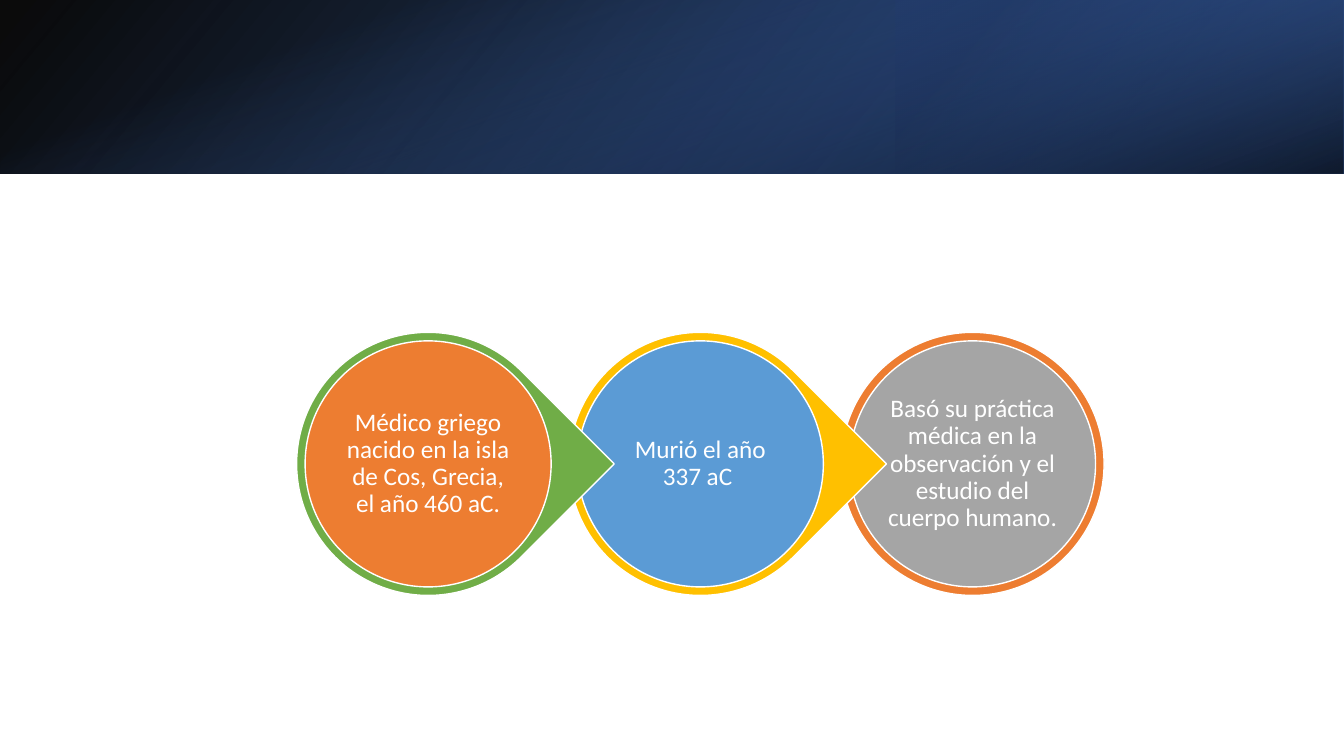
from lxml.etree import SubElement
from pptx import Presentation
from pptx.dml.color import RGBColor
from pptx.enum.shapes import MSO_SHAPE
from pptx.enum.text import MSO_ANCHOR, PP_ALIGN
from pptx.oxml.ns import qn
from pptx.util import Cm, Pt

WHITE = RGBColor(0xFF, 0xFF, 0xFF)
BLACK = RGBColor(0x00, 0x00, 0x00)
NAVY = RGBColor(0x20, 0x38, 0x64)
DARK_BLUE = RGBColor(0x2F, 0x55, 0x97)
MID_BLUE = RGBColor(0x44, 0x72, 0xC4)
SKY_BLUE = RGBColor(0x5B, 0x9B, 0xD5)
ORANGE = RGBColor(0xED, 0x7D, 0x31)
GRAY = RGBColor(0xA5, 0xA5, 0xA5)
GOLD = RGBColor(0xFF, 0xC0, 0x00)
GREEN = RGBColor(0x70, 0xAD, 0x47)

SLIDE_WIDTH, SLIDE_HEIGHT = 33.87, 19.05
BANNER_HEIGHT = 4.37
FIRST_CENTER, CENTER_Y, STEP = 10.79, 11.69, 6.86
RING_SIZE, DISC_SIZE, TEXT_SIZE = 6.63, 6.2, 4.42

# Text, ring shape, ring colour, disc colour, from left to right
STAGES = [
    ("Médico griego nacido en la isla de Cos, Grecia, el año 460 aC.",
     MSO_SHAPE.TEAR, GREEN, ORANGE),
    ("Murió el año 337 aC ", MSO_SHAPE.TEAR, GOLD, SKY_BLUE),
    ("Basó su práctica médica en la observación y el estudio del cuerpo humano. ",
     MSO_SHAPE.OVAL, ORANGE, GRAY),
]


def set_gradient(shape, stops, angle):
    """Fill with (position %, colour, opacity %) stops along an angle in degrees."""
    shape.fill.gradient()
    gradient = shape.fill._fill._gradFill
    for child in list(gradient):
        gradient.remove(child)
    stop_list = SubElement(gradient, qn("a:gsLst"))
    for position, color, opacity in stops:
        stop = SubElement(stop_list, qn("a:gs"), pos=str(position * 1000))
        color_element = SubElement(stop, qn("a:srgbClr"), val=str(color))
        SubElement(color_element, qn("a:alpha"), val=str(opacity * 1000))
    SubElement(gradient, qn("a:lin"), ang=str(angle * 60000), scaled="0")


def add_banner_layer(slide, box, stops, angle, rotation=0, flipped=False):
    shape = slide.shapes.add_shape(MSO_SHAPE.RECTANGLE, *(Cm(value) for value in box))
    shape.shadow.inherit = False
    shape.line.fill.background()
    shape.rotation = rotation
    if flipped:
        shape._element.spPr.find(qn("a:xfrm")).set("flipH", "1")
    set_gradient(shape, stops, angle)


def centered_box(center_x, size):
    return Cm(center_x - size / 2), Cm(CENTER_Y - size / 2), Cm(size), Cm(size)


def add_round_shape(group, kind, center_x, size, color):
    shape = group.shapes.add_shape(kind, *centered_box(center_x, size))
    shape.shadow.inherit = False
    shape.fill.solid()
    shape.fill.fore_color.rgb = color
    shape.line.color.rgb = WHITE
    shape.line.width = Pt(1)
    if kind == MSO_SHAPE.TEAR:
        shape.rotation = 45


def add_label(group, center_x, text):
    text_frame = group.shapes.add_textbox(*centered_box(center_x, TEXT_SIZE)).text_frame
    text_frame.word_wrap = True
    text_frame.vertical_anchor = MSO_ANCHOR.MIDDLE
    text_frame.margin_left = text_frame.margin_right = Cm(0.08)
    text_frame.margin_top = text_frame.margin_bottom = Cm(0.08)
    text_frame.text = text
    paragraph = text_frame.paragraphs[0]
    paragraph.alignment = PP_ALIGN.CENTER
    paragraph.line_spacing = 0.9
    font = paragraph.runs[0].font
    font.name = "Calibri"
    font.size = Pt(18)
    font.color.rgb = WHITE


def main():
    presentation = Presentation()
    presentation.slide_width = Cm(SLIDE_WIDTH)
    presentation.slide_height = Cm(SLIDE_HEIGHT)
    slide = presentation.slides.add_slide(presentation.slide_layouts[6])

    # Banner: three translucent gradients
    add_banner_layer(slide, (0, 0, SLIDE_WIDTH, BANNER_HEIGHT),
                     [(0, BLACK, 96), (100, DARK_BLUE, 100)], 140, flipped=True)
    third = SLIDE_WIDTH / 3
    add_banner_layer(slide, (2 * third, 0, third, BANNER_HEIGHT),
                     [(19, NAVY, 68), (100, MID_BLUE, 79)], 320, 180, flipped=True)
    offset = (SLIDE_WIDTH - BANNER_HEIGHT) / 2
    add_banner_layer(slide, (offset, -offset, BANNER_HEIGHT, SLIDE_WIDTH),
                     [(23, MID_BLUE, 0), (99, BLACK, 74)], 340, 90)

    # Stages: drawn right to left so that each point overlaps the next circle
    group = slide.shapes.add_group_shape()
    for index, (text, kind, ring_color, disc_color) in reversed(list(enumerate(STAGES))):
        center_x = FIRST_CENTER + index * STEP
        add_round_shape(group, kind, center_x, RING_SIZE, ring_color)
        add_round_shape(group, MSO_SHAPE.OVAL, center_x, DISC_SIZE, disc_color)
        add_label(group, center_x, text)

    presentation.save("out.pptx")


if __name__ == "__main__":
    main()
